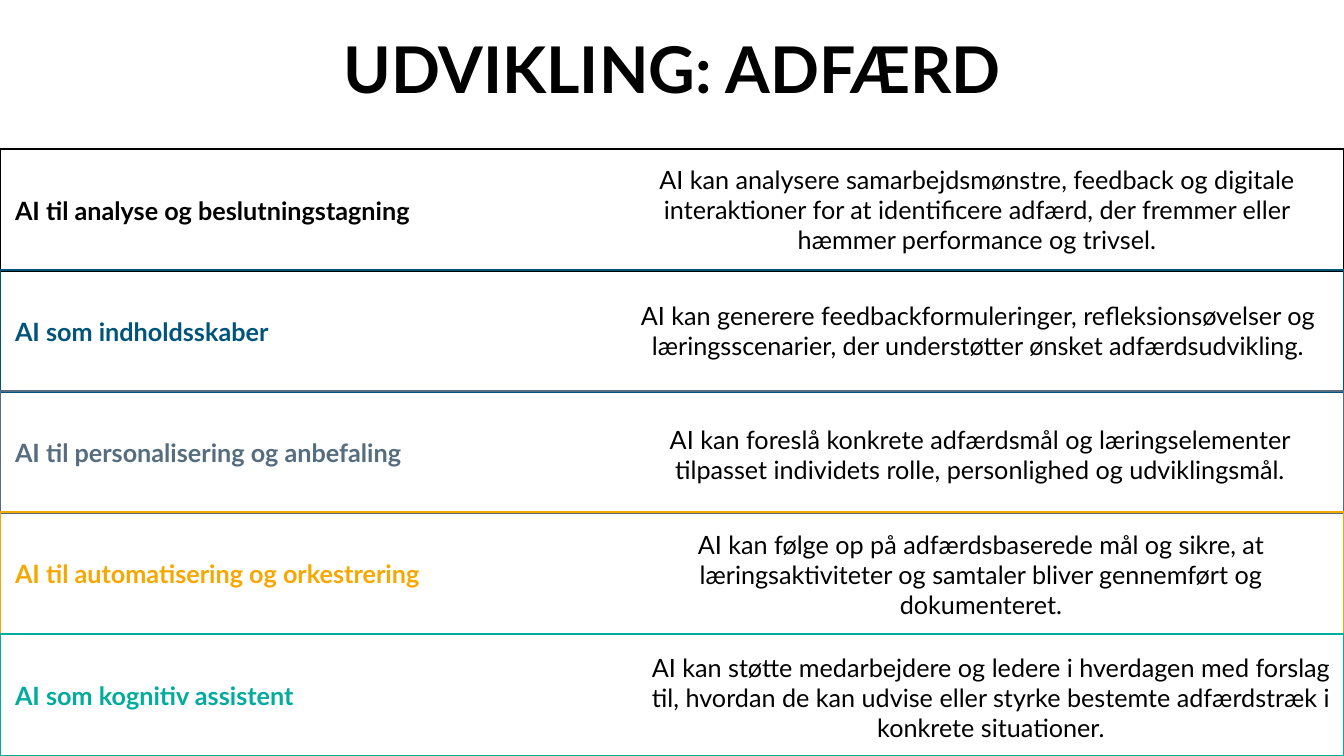
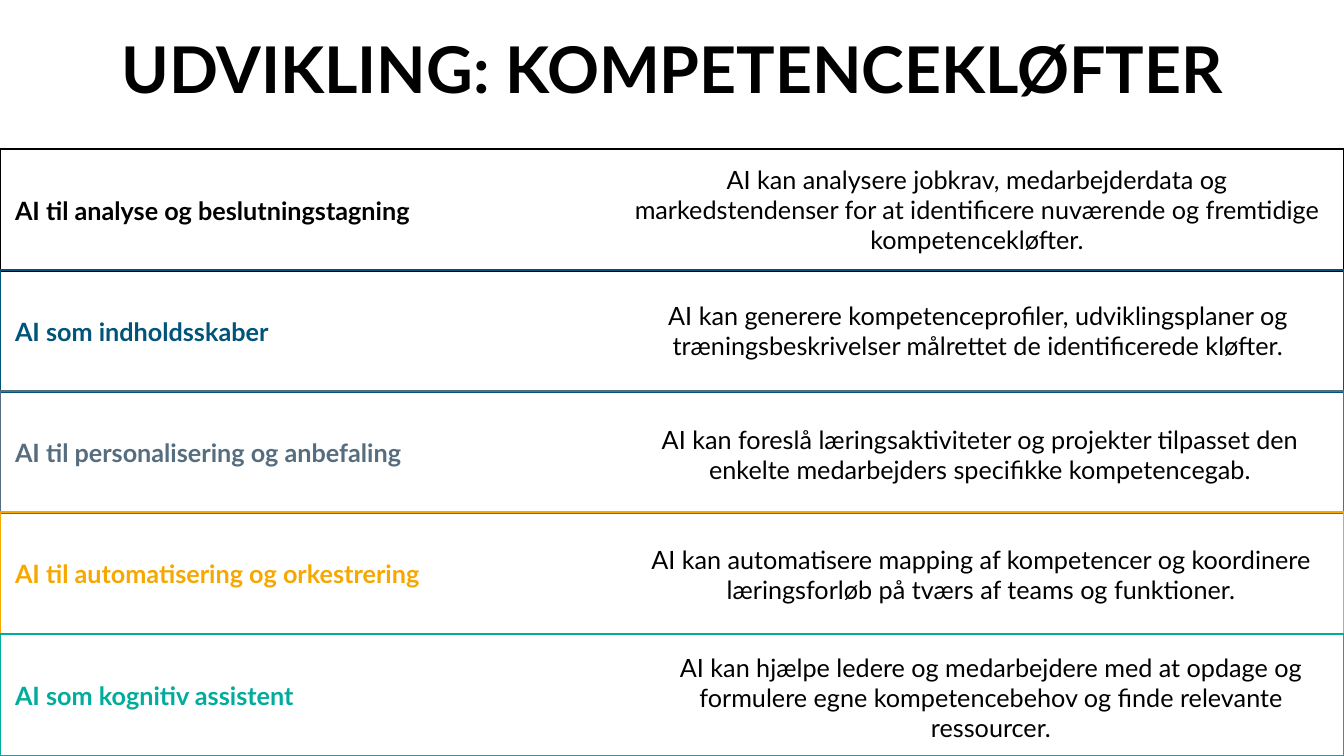
from collections import namedtuple

from pptx import Presentation
from pptx.dml.color import RGBColor
from pptx.enum.shapes import MSO_SHAPE
from pptx.enum.text import MSO_ANCHOR, PP_ALIGN
from pptx.util import Emu, Pt

SLIDE_WIDTH, SLIDE_HEIGHT = 1344, 756
EMU_PER_PX = 12192000 / SLIDE_WIDTH

FONT = "Lato"
TITLE_SIZE, BODY_SIZE = 46, 18
BLACK = RGBColor(0x00, 0x00, 0x00)
BLUE = RGBColor(0x00, 0x54, 0x7A)
SLATE = RGBColor(0x55, 0x6D, 0x7E)
AMBER = RGBColor(0xF6, 0xA8, 0x00)
TEAL = RGBColor(0x00, 0xAC, 0x9C)

TITLE_HEIGHT = 135
FIRST_TOP, BAND_HEIGHT = 149, 122
LABEL_INSET = 15
TEXT_WIDTH, TEXT_HEIGHT = 706, 121

Band = namedtuple("Band", "label color text_left text_drop")
BANDS = [
    Band("AI til analyse og beslutningstagning", BLACK, 624, 0),
    Band("AI som indholdsskaber", BLUE, 625, 0),
    Band("AI til personalisering og anbefaling", SLATE, 627, 3),
    Band("AI til automatisering og orkestrering", AMBER, 628, 2),
    Band("AI som kognitiv assistent", TEAL, 638, 3),
]

PAGES = {
    "UDVIKLING: ADFÆRD": [
        "AI kan analysere samarbejdsmønstre, feedback og digitale interaktioner "
        "for at identificere adfærd, der fremmer eller hæmmer performance og trivsel.",
        "AI kan generere feedbackformuleringer, refleksionsøvelser og "
        "læringsscenarier, der understøtter ønsket adfærdsudvikling.",
        "AI kan foreslå konkrete adfærdsmål og læringselementer tilpasset "
        "individets rolle, personlighed og udviklingsmål.",
        "AI kan følge op på adfærdsbaserede mål og sikre, at læringsaktiviteter "
        "og samtaler bliver gennemført og dokumenteret.",
        "AI kan støtte medarbejdere og ledere i hverdagen med forslag til, hvordan "
        "de kan udvise eller styrke bestemte adfærdstræk i konkrete situationer.",
    ],
    "UDVIKLING: KOMPETENCEKLØFTER": [
        "AI kan analysere jobkrav, medarbejderdata og markedstendenser for at "
        "identificere nuværende og fremtidige kompetencekløfter.",
        "AI kan generere kompetenceprofiler, udviklingsplaner og "
        "træningsbeskrivelser målrettet de identificerede kløfter.",
        "AI kan foreslå læringsaktiviteter og projekter tilpasset den enkelte "
        "medarbejders specifikke kompetencegab.",
        "AI kan automatisere mapping af kompetencer og koordinere læringsforløb "
        "på tværs af teams og funktioner.",
        "AI kan hjælpe ledere og medarbejdere med at opdage og formulere egne "
        "kompetencebehov og finde relevante ressourcer.",
    ],
}


def px(length):
    return Emu(round(length * EMU_PER_PX))


def band_top(index):
    return FIRST_TOP + index * (SLIDE_HEIGHT - BAND_HEIGHT - FIRST_TOP) // (len(BANDS) - 1)


def write(shape, text, size, color=BLACK, bold=False, align=PP_ALIGN.CENTER):
    frame = shape.text_frame
    frame.word_wrap = True
    frame.vertical_anchor = MSO_ANCHOR.MIDDLE
    para = frame.paragraphs[0]
    para.alignment = align
    span = para.add_run()
    span.text = text
    span.font.name = FONT
    span.font.size = Pt(size)
    span.font.bold = bold
    span.font.color.rgb = color


def add_text(page, left, top, width, height, text, size, bold=False):
    box = page.shapes.add_textbox(px(left), px(top), px(width), px(height))
    write(box, text, size, bold=bold)


def add_band(group, top, band):
    box = group.shapes.add_shape(
        MSO_SHAPE.RECTANGLE, 0, px(top), px(SLIDE_WIDTH), px(BAND_HEIGHT))
    box.shadow.inherit = False
    box.fill.background()
    box.line.color.rgb = band.color
    box.line.width = Pt(1.5)
    box.text_frame.margin_left = px(LABEL_INSET)
    write(box, band.label, BODY_SIZE, band.color, True, PP_ALIGN.LEFT)


def add_page(deck, title, texts):
    page = deck.slides.add_slide(deck.slide_layouts[6])
    group = page.shapes.add_group_shape()
    for index, band in enumerate(BANDS):
        add_band(group, band_top(index), band)
    add_text(page, 0, 0, SLIDE_WIDTH, TITLE_HEIGHT, title, TITLE_SIZE, bold=True)
    for index, (band, text) in enumerate(zip(BANDS, texts)):
        add_text(page, band.text_left, band_top(index) + band.text_drop,
                 TEXT_WIDTH, TEXT_HEIGHT, text, BODY_SIZE)


def main():
    deck = Presentation()
    deck.slide_width, deck.slide_height = px(SLIDE_WIDTH), px(SLIDE_HEIGHT)
    for title, texts in PAGES.items():
        add_page(deck, title, texts)
    deck.save("out.pptx")


if __name__ == "__main__":
    main()
